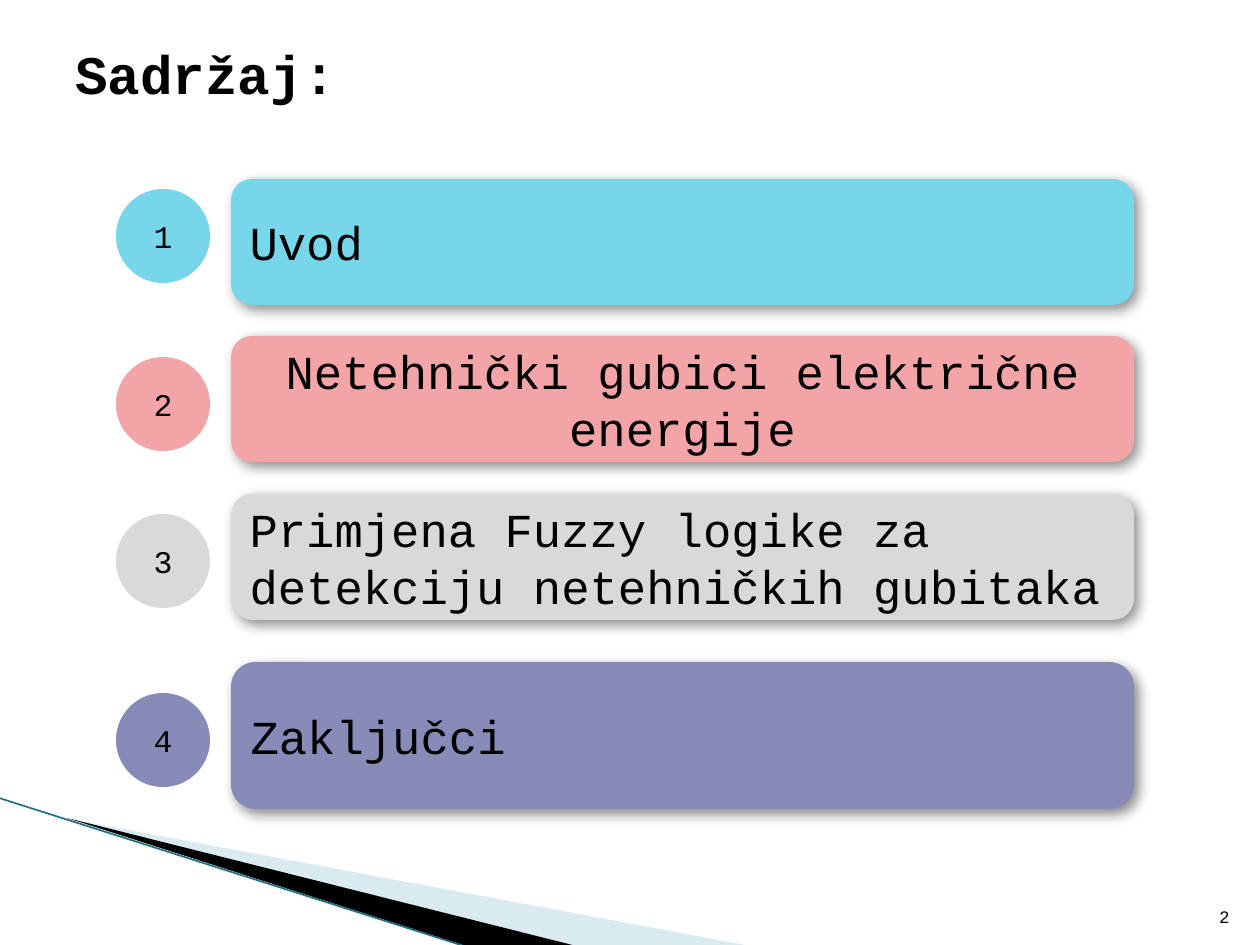
from dataclasses import dataclass

from lxml.etree import SubElement
from pptx import Presentation
from pptx.dml.color import RGBColor
from pptx.enum.shapes import MSO_CONNECTOR, MSO_SHAPE
from pptx.enum.text import MSO_ANCHOR, PP_ALIGN
from pptx.oxml.ns import qn
from pptx.shapes.autoshape import Shape
from pptx.slide import Slide
from pptx.util import Emu, Pt

SCALE = 914400 / 126
FONT = "Courier New"
BLACK = "000000"


@dataclass(frozen=True)
class Topic:
    number: str
    title: str
    color: str
    bar_top: int
    bar_height: int
    circle_top: int
    align: PP_ALIGN = PP_ALIGN.LEFT


@dataclass(frozen=True)
class Wedge:
    points: tuple[tuple[int, int], ...]
    color: str
    opacity: int = 100


TOPICS = [
    Topic("1", "Uvod", "78D6EA", 179, 126, 189),
    Topic("2", "Netehnički gubici električne energije", "F2A4A7", 336, 126, 357, PP_ALIGN.CENTER),
    Topic("3", "Primjena Fuzzy logike za detekciju netehničkih gubitaka", "D9D9D9", 494, 126, 514),
    Topic("4", "Zaključci", "878BB8", 662, 147, 693),
]
WEDGES = [
    Wedge(((69, 819), (750, 946), (575, 946)), "A0CBDC", 40),
    Wedge(((67, 818), (576, 946), (469, 947)), BLACK),
]


def px(length: int) -> Emu:
    return Emu(round(length * SCALE))


def rgb(color: str) -> RGBColor:
    return RGBColor.from_string(color)


def paint(shape: Shape, color: str) -> None:
    shape.shadow.inherit = False
    shape.fill.solid()
    shape.fill.fore_color.rgb = rgb(color)
    shape.line.fill.background()


def write(shape: Shape, text: str, size: int, align: PP_ALIGN = PP_ALIGN.LEFT,
          anchor: MSO_ANCHOR = MSO_ANCHOR.MIDDLE, bold: bool = False) -> None:
    frame = shape.text_frame
    frame.word_wrap = True
    frame.vertical_anchor = anchor
    para = frame.paragraphs[0]
    para.alignment = align
    span = para.add_run()
    span.text = text
    span.font.name = FONT
    span.font.size = Pt(size)
    span.font.bold = bold
    span.font.color.rgb = rgb(BLACK)


def add_shadow(shape: Shape) -> None:
    effects = shape._element.spPr.find(qn("a:effectLst"))
    shadow = SubElement(effects, qn("a:outerShdw"), blurRad=str(Pt(7)), dist=str(Pt(3)),
                        dir=str(50 * 60000), algn="tl", rotWithShape="0")
    color = SubElement(shadow, qn("a:srgbClr"), val=BLACK)
    SubElement(color, qn("a:alpha"), val="43000")


def add_wedge(page: Slide, wedge: Wedge) -> None:
    start, *others = wedge.points
    builder = page.shapes.build_freeform(*start, scale=SCALE)
    builder.add_line_segments(others, close=True)
    shape = builder.convert_to_shape()
    paint(shape, wedge.color)
    if wedge.opacity < 100:
        color = shape._element.spPr.find(qn("a:solidFill"))[0]
        SubElement(color, qn("a:alpha"), val=str(wedge.opacity * 1000))


def add_edge(page: Slide) -> None:
    edge = page.shapes.add_connector(MSO_CONNECTOR.STRAIGHT, px(-1), px(798), px(467), px(947))
    edge.line.color.rgb = rgb("1F7083")
    edge.line.width = Pt(0.95)
    SubElement(edge._element.spPr, qn("a:effectLst"))


def add_label(page: Slide, left: int, top: int, width: int, height: int) -> Shape:
    return page.shapes.add_textbox(px(left), px(top), px(width), px(height))


def add_topic(page: Slide, topic: Topic) -> None:
    bar = page.shapes.add_shape(MSO_SHAPE.ROUNDED_RECTANGLE, px(231), px(topic.bar_top),
                                px(903), px(topic.bar_height))
    paint(bar, topic.color)
    add_shadow(bar)
    write(bar, topic.title, 27, topic.align)
    circle = page.shapes.add_shape(MSO_SHAPE.FLOWCHART_CONNECTOR, px(116), px(topic.circle_top),
                                   px(94), px(94))
    paint(circle, topic.color)
    write(circle, topic.number, 18, PP_ALIGN.CENTER)


def main() -> None:
    deck = Presentation()
    deck.slide_width, deck.slide_height = px(1260), px(945)
    page = deck.slides.add_slide(deck.slide_layouts[6])
    for wedge in WEDGES:
        add_wedge(page, wedge)
    add_edge(page)
    write(add_label(page, 63, 10, 1134, 126), "Sadržaj:", 31, bold=True)
    for topic in TOPICS:
        add_topic(page, topic)
    write(add_label(page, 1192, 883, 50, 50), "2", 10, PP_ALIGN.RIGHT, MSO_ANCHOR.BOTTOM)
    deck.save("out.pptx")


if __name__ == "__main__":
    main()
